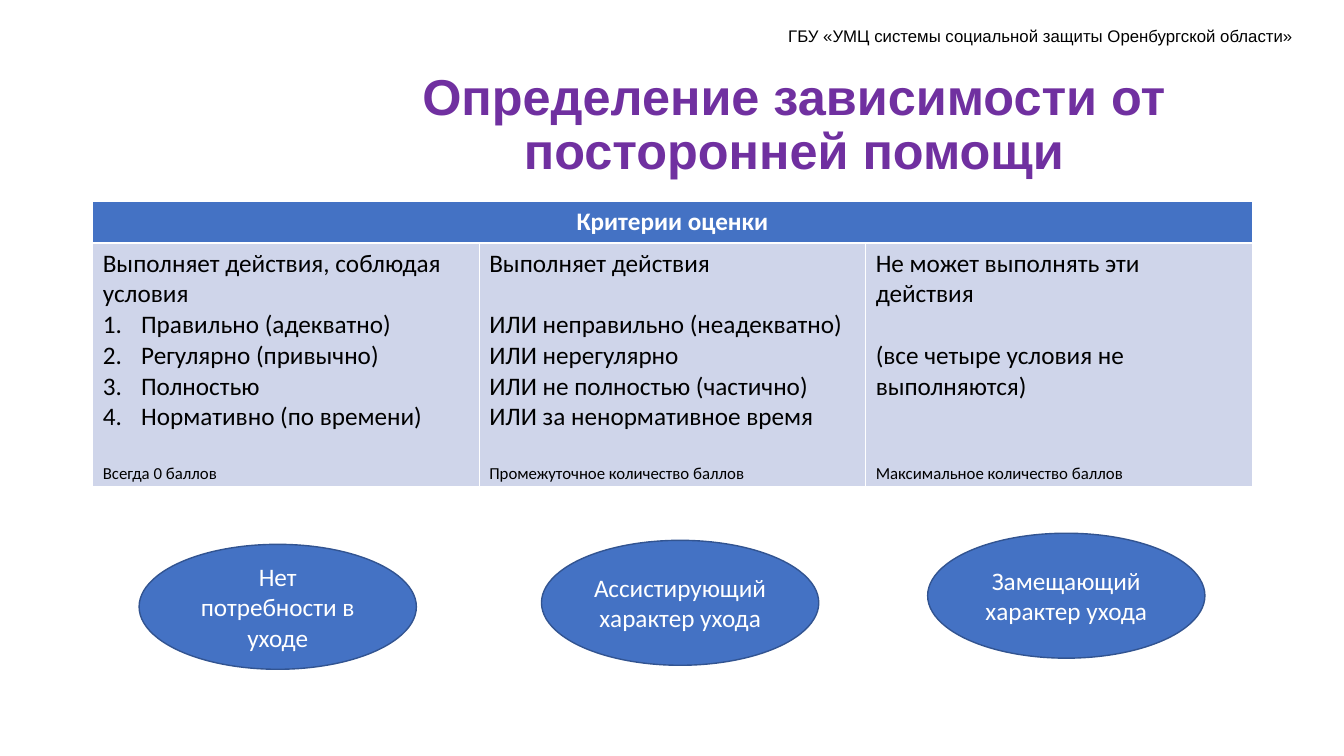
from dataclasses import dataclass
from lxml import etree
from pptx import Presentation
from pptx import util as u
from pptx.dml import color
from pptx.enum import shapes, text
from pptx.oxml import ns

HEADER = "ГБУ «УМЦ системы социальной защиты Оренбургской области»"
TITLE = "Определение зависимости от посторонней помощи"
TABLE_HEAD = "Критерии оценки"
# (text, numbered, blank lines above)
CRITERIA = [
    [("Выполняет действия, соблюдая условия", False, 0),
     ("Правильно (адекватно)", True, 0),
     ("Регулярно (привычно)", True, 0),
     ("Полностью", True, 0),
     ("Нормативно (по времени)", True, 0)],
    [("Выполняет действия", False, 0),
     ("ИЛИ неправильно (неадекватно)", False, 1),
     ("ИЛИ нерегулярно", False, 0),
     ("ИЛИ не полностью (частично)", False, 0),
     ("ИЛИ за ненормативное время", False, 0)],
    [("Не может выполнять эти действия", False, 0),
     ("(все четыре условия не выполняются)", False, 1)],
]
SCORES = [("Всегда 0 баллов", 1), ("Промежуточное количество баллов", 1),
          ("Максимальное количество баллов", 2)]
CARE = [("Нет потребности в уходе", 10.35, 72),
        ("Ассистирующий характер ухода", 40.29, 71.47),
        ("Замещающий характер ухода", 69.02, 70.53)]

HEADER_BOX = (57.91, 2.8, 40.36, 4)
TITLE_BOX = (22.81, 8.67, 72.54, 16)
TABLE_BOX = (6.9, 26.67, 86.27, 37.47)
HEAD_ROW = 5.47
OVAL_SIZE = (20.63, 16.53)


@dataclass(frozen=True)
class Theme:
    head: str = "Arial"
    body: str = "Calibri"
    black: str = "000000"
    white: str = "FFFFFF"
    purple: str = "7030A0"
    blue: str = "4472C4"
    outline: str = "325491"
    pale: str = "CFD5EA"
    title: int = 36
    normal: int = 18
    small: int = 12
    line: int = 22
    indent: float = 0.38


T = Theme()
prs = Presentation()
prs.slide_width, prs.slide_height = u.Inches(13.33), u.Inches(7.5)
s = prs.slides.add_slide(prs.slide_layouts[6])


def place(x, y, w, h):
    across, down = prs.slide_width / 100, prs.slide_height / 100
    return int(x * across), int(y * down), int(w * across), int(h * down)


def rgb(value):
    return color.RGBColor.from_string(value)


def fill(obj, value):
    obj.fill.solid()
    obj.fill.fore_color.rgb = rgb(value)


def write(p, words, font, size, ink, bold=False, align=text.PP_ALIGN.LEFT):
    p.text = words
    p.alignment = align
    for r in p.runs:
        r.font.name, r.font.size, r.font.bold = font, u.Pt(size), bold
        r.font.color.rgb = rgb(ink)


def number(p):
    pPr = p._p.get_or_add_pPr()
    pPr.set("marL", str(u.Inches(T.indent)))
    pPr.set("indent", str(-u.Inches(T.indent)))
    etree.SubElement(pPr, ns.qn("a:buAutoNum"), type="arabicPeriod")


def add_text(box):
    tf = s.shapes.add_textbox(*place(*box)).text_frame
    tf.word_wrap = True
    return tf


def add_criteria(cell, lines, score):
    tf = cell.text_frame
    words, gap = score
    rows = [(*line, T.normal) for line in lines] + [(words, False, gap, T.small)]
    for i, (words, numbered, gap, size) in enumerate(rows):
        p = tf.add_paragraph() if i else tf.paragraphs[0]
        if gap:
            p.space_before = u.Pt(gap * T.line)
        if numbered:
            number(p)
        write(p, words, T.body, size, T.black)


def add_table():
    x, y, w, h = place(*TABLE_BOX)
    table = s.shapes.add_table(2, len(CRITERIA), x, y, w, h).table
    table.rows[0].height = place(0, 0, 0, HEAD_ROW)[3]
    table.rows[1].height = h - table.rows[0].height
    head = table.cell(0, 0)
    for cell in table.rows[0].cells:
        fill(cell, T.blue)
    head.merge(table.cell(0, len(CRITERIA) - 1))
    write(head.text_frame.paragraphs[0], TABLE_HEAD, T.body, T.normal,
          T.white, True, text.PP_ALIGN.CENTER)
    for cell, lines, score in zip(table.rows[1].cells, CRITERIA, SCORES):
        fill(cell, T.pale)
        add_criteria(cell, lines, score)


def add_oval(words, x, y):
    sp = s.shapes.add_shape(shapes.MSO_SHAPE.OVAL, *place(x, y, *OVAL_SIZE))
    sp.shadow.inherit = False
    fill(sp, T.blue)
    sp.line.color.rgb, sp.line.width = rgb(T.outline), u.Pt(1)
    tf = sp.text_frame
    tf.word_wrap = True
    tf.vertical_anchor = text.MSO_ANCHOR.MIDDLE
    write(tf.paragraphs[0], words, T.body, T.normal, T.white,
          align=text.PP_ALIGN.CENTER)


write(add_text(HEADER_BOX).paragraphs[0], HEADER, T.head, T.small, T.black)
tf = add_text(TITLE_BOX)
tf.vertical_anchor = text.MSO_ANCHOR.MIDDLE
p = tf.paragraphs[0]
p.line_spacing = 0.9
write(p, TITLE, T.head, T.title, T.purple, True, text.PP_ALIGN.CENTER)
add_table()
for care in CARE:
    add_oval(*care)
prs.save("out.pptx")
